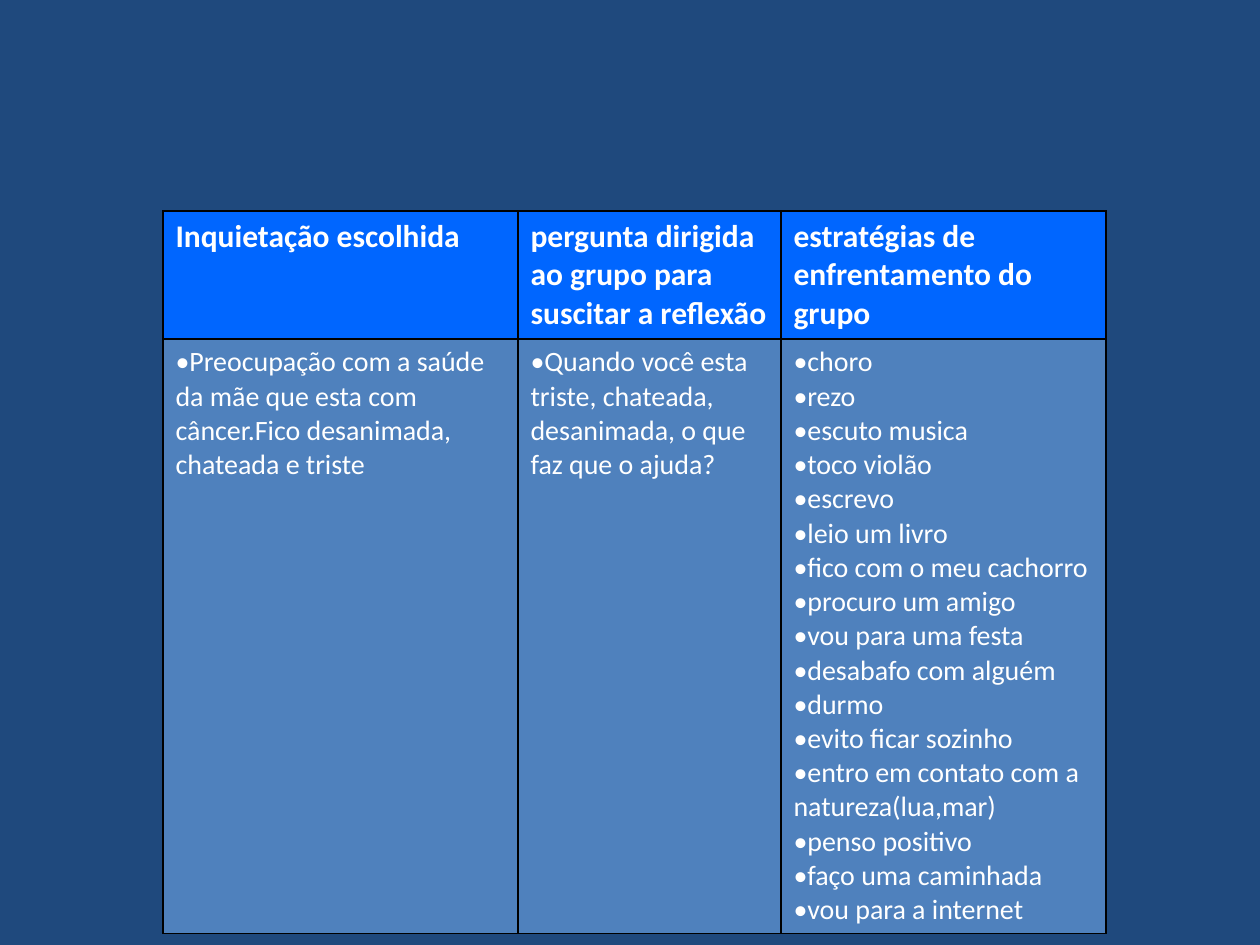
from lxml import etree
from pptx import Presentation
from pptx import util as u
from pptx.dml.color import RGBColor
from pptx.oxml import ns

NAVY = RGBColor(0x1F, 0x49, 0x7D)
BRIGHT_BLUE = RGBColor(0x00, 0x66, 0xFF)
SOFT_BLUE = RGBColor(0x4F, 0x81, 0xBD)
WHITE = RGBColor(0xFF, 0xFF, 0xFF)
BLACK = RGBColor(0x00, 0x00, 0x00)
FONT = "Calibri"
PX_PER_INCH = 126

COLUMN_WIDTHS = [355, 263, 325]
ROW_HEIGHTS = [128, 594]
HEADINGS = [
    "Inquietação escolhida",
    "pergunta dirigida ao grupo para suscitar a reflexão",
    "estratégias de enfrentamento do grupo",
]
ANSWERS = [
    ["Preocupação com a saúde da mãe que esta com câncer.Fico desanimada, "
     "chateada e triste"],
    ["Quando você esta triste, chateada, desanimada, o que faz que o ajuda?"],
    ["choro", "rezo", "escuto musica", "toco violão", "escrevo",
     "leio um livro", "fico com o meu cachorro", "procuro um amigo",
     "vou para uma festa", "desabafo com alguém", "durmo",
     "evito ficar sozinho", "entro em contato com a natureza(lua,mar)",
     "penso positivo", "faço uma caminhada", "vou para a internet"],
]


def px(n):
    return u.Emu(round(n * 914400 / PX_PER_INCH))


def add_bullet(p):
    p_pr = p._p.get_or_add_pPr()
    etree.SubElement(p_pr, ns.qn("a:buFont"), typeface=FONT)
    etree.SubElement(p_pr, ns.qn("a:buChar"), char="•")


def add_borders(cell):
    """Draw a 1 pt line on all four sides; lines must precede the fill."""
    tc_pr = cell._tc.get_or_add_tcPr()
    for i, side in enumerate(("lnL", "lnR", "lnT", "lnB")):
        line = etree.Element(ns.qn(f"a:{side}"), w=str(u.Pt(1)))
        fill = etree.SubElement(line, ns.qn("a:solidFill"))
        etree.SubElement(fill, ns.qn("a:srgbClr"), val=str(BLACK))
        tc_pr.insert(i, line)


def fill_cell(cell, lines, color, size, bold=False, bulleted=False):
    cell.fill.solid()
    cell.fill.fore_color.rgb = color
    add_borders(cell)
    tf = cell.text_frame
    for i, line in enumerate(lines):
        p = tf.add_paragraph() if i else tf.paragraphs[0]
        if bulleted:
            add_bullet(p)
        r = p.add_run()
        r.text = line
        r.font.name = FONT
        r.font.size = u.Pt(size)
        r.font.bold = bold
        r.font.color.rgb = WHITE


def add_reflection_table(s, left, top):
    width, height = sum(COLUMN_WIDTHS), sum(ROW_HEIGHTS)
    table = s.shapes.add_table(len(ROW_HEIGHTS), len(COLUMN_WIDTHS), px(left),
                               px(top), px(width), px(height)).table
    table.horz_banding = False
    for row, row_height in zip(table.rows, ROW_HEIGHTS):
        row.height = px(row_height)
    for i, column_width in enumerate(COLUMN_WIDTHS):
        table.columns[i].width = px(column_width)
        fill_cell(table.cell(0, i), [HEADINGS[i]], BRIGHT_BLUE, 18, bold=True)
        fill_cell(table.cell(1, i), ANSWERS[i], SOFT_BLUE, 16, bulleted=True)


def main():
    prs = Presentation()
    prs.slide_width, prs.slide_height = px(1260), px(945)
    s = prs.slides.add_slide(prs.slide_layouts[6])
    s.background.fill.solid()
    s.background.fill.fore_color.rgb = NAVY
    add_reflection_table(s, 163, 211)
    prs.save("out.pptx")


if __name__ == "__main__":
    main()
